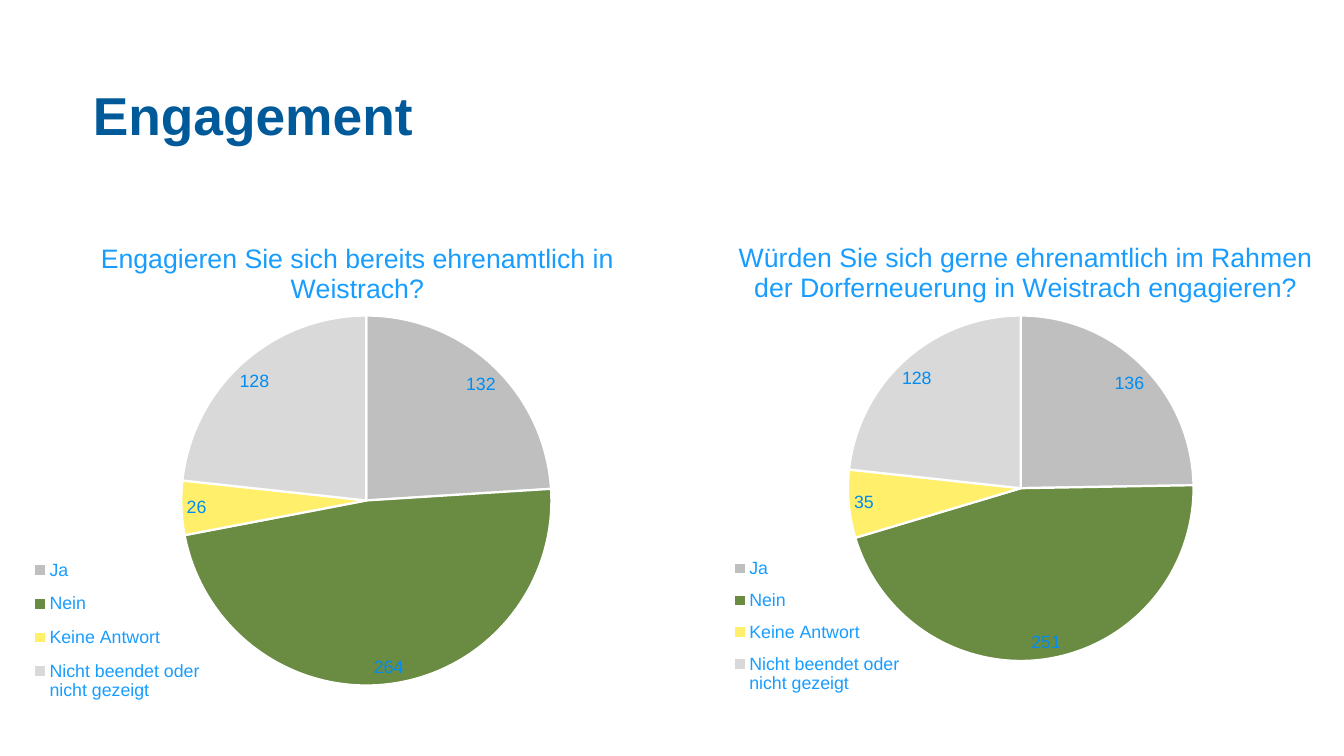
import pptx
import pptx.chart.data
import pptx.dml.color
import pptx.enum.chart
import pptx.enum.text
import pptx.oxml
import pptx.oxml.ns
import pptx.util

ANSWERS = ["Ja", "Nein", "Keine Antwort", "Nicht beendet oder nicht gezeigt"]
SLICE_COLORS = ["BFBFBF", "698B42", "FFEF6B", "D9D9D9"]
SURVEYS = [
    {
        "question": "Würden Sie sich gerne ehrenamtlich im Rahmen der Dorferneuerung in Weistrach engagieren?",
        "votes": [136, 251, 35, 128],
        "frame": (6.07, 2, 7, 4.85),
        "heading": (6.88, 2.2),
        "pie": (7.95, 2.96, 3.24, 3.24),
        "legend": (6.84, 5.12, 1.64, 1.5),
    },
    {
        "question": "Engagieren Sie sich bereits ehrenamtlich in Weistrach?",
        "votes": [132, 264, 26, 128],
        "frame": (0, 2, 6.6, 5.08),
        "heading": (0.9, 2.21),
        "pie": (1.7, 2.96, 3.47, 3.47),
        "legend": (0.28, 5.12, 1.64, 1.58),
    },
]


def color(code):
    return pptx.dml.color.RGBColor.from_string(code)


def apply(target, values):
    for name, value in values.items():
        setattr(target, name, value)


class SlideBuilder:
    font_name = "Arial"

    def __init__(self, deck):
        self.page = deck.slides.add_slide(deck.slide_layouts[5])

    def style(self, font, size, code, bold=False):
        apply(font, {"name": self.font_name, "size": pptx.util.Pt(size), "bold": bold})
        font.color.rgb = color(code)

    def title(self, text, left, top, width, height):
        box = self.page.shapes.title
        places = {"left": left, "top": top, "width": width, "height": height}
        apply(box, {name: pptx.util.Inches(value) for name, value in places.items()})
        apply(box.text_frame, {
            "margin_left": 0, "margin_top": 0, "margin_right": 0, "margin_bottom": 0,
            "word_wrap": True, "vertical_anchor": pptx.enum.text.MSO_ANCHOR.TOP,
        })
        para = box.text_frame.paragraphs[0]
        apply(para, {"alignment": pptx.enum.text.PP_ALIGN.LEFT,
                     "line_spacing": pptx.util.Pt(38)})
        span = para.add_run()
        span.text = text
        self.style(span.font, 36, "005A99", True)

    def place(self, element, index, frame, area, inner=False):
        for layout in element.findall(pptx.oxml.ns.qn("c:layout")):
            element.remove(layout)
        left, top, width, height = frame
        shares = [(area[0] - left) / width, (area[1] - top) / height]
        shares += [part / whole for part, whole in zip(area[2:], (width, height))]
        target = '<c:layoutTarget val="inner"/>' if inner else ""
        sizes = "".join(f'<c:{name} val="{share:.4f}"/>' for name, share in zip("xywh", shares))
        element.insert(index, pptx.oxml.parse_xml(
            f'<c:layout {pptx.oxml.ns.nsdecls("c")}><c:manualLayout>{target}'
            f'<c:xMode val="edge"/><c:yMode val="edge"/>{sizes}</c:manualLayout></c:layout>'))

    def pie(self, survey):
        frame = survey["frame"]
        data = pptx.chart.data.CategoryChartData()
        data.categories = ANSWERS
        data.add_series("Series 1", survey["votes"])
        chart = self.page.shapes.add_chart(
            pptx.enum.chart.XL_CHART_TYPE.PIE, *map(pptx.util.Inches, frame), data).chart
        self.style(chart.font, 10, "00599A")

        chart.has_title = True
        span = chart.chart_title.text_frame.paragraphs[0].add_run()
        span.text = survey["question"]
        self.style(span.font, 18, "189DFF")

        chart.has_legend = True
        apply(chart.legend, {"position": pptx.enum.chart.XL_LEGEND_POSITION.BOTTOM,
                             "include_in_layout": False})
        self.style(chart.legend.font, 12, "189DFF")

        plot = chart.plots[0]
        apply(plot, {"vary_by_categories": True, "has_data_labels": True})
        apply(plot.data_labels, {
            "show_value": True, "show_percentage": False,
            "position": pptx.enum.chart.XL_LABEL_POSITION.BEST_FIT,
        })
        self.style(plot.data_labels.font, 12, "008CF3")
        for number, code in enumerate(SLICE_COLORS):
            piece = plot.series[0].points[number].format
            piece.fill.solid()
            piece.fill.fore_color.rgb = color(code)
            piece.line.color.rgb = color("FFFFFF")
            piece.line.width = pptx.util.Pt(1.5)

        plot_area = chart.element.find(".//" + pptx.oxml.ns.qn("c:plotArea"))
        self.place(chart.chart_title.element if hasattr(chart.chart_title, "element")
                   else chart.element.find(".//" + pptx.oxml.ns.qn("c:title")),
                   1, frame, survey["heading"])
        self.place(plot_area, 0, frame, survey["pie"], True)
        self.place(chart.element.find(".//" + pptx.oxml.ns.qn("c:legend")),
                   1, frame, survey["legend"])


def main():
    deck = pptx.Presentation()
    apply(deck, {"slide_width": pptx.util.Inches(12.6), "slide_height": pptx.util.Inches(7.09)})
    builder = SlideBuilder(deck)
    builder.title("Engagement", 0.87, 0.84, 7.7, 0.53)
    for survey in SURVEYS:
        builder.pie(survey)
    deck.save("out.pptx")


if __name__ == "__main__":
    main()
